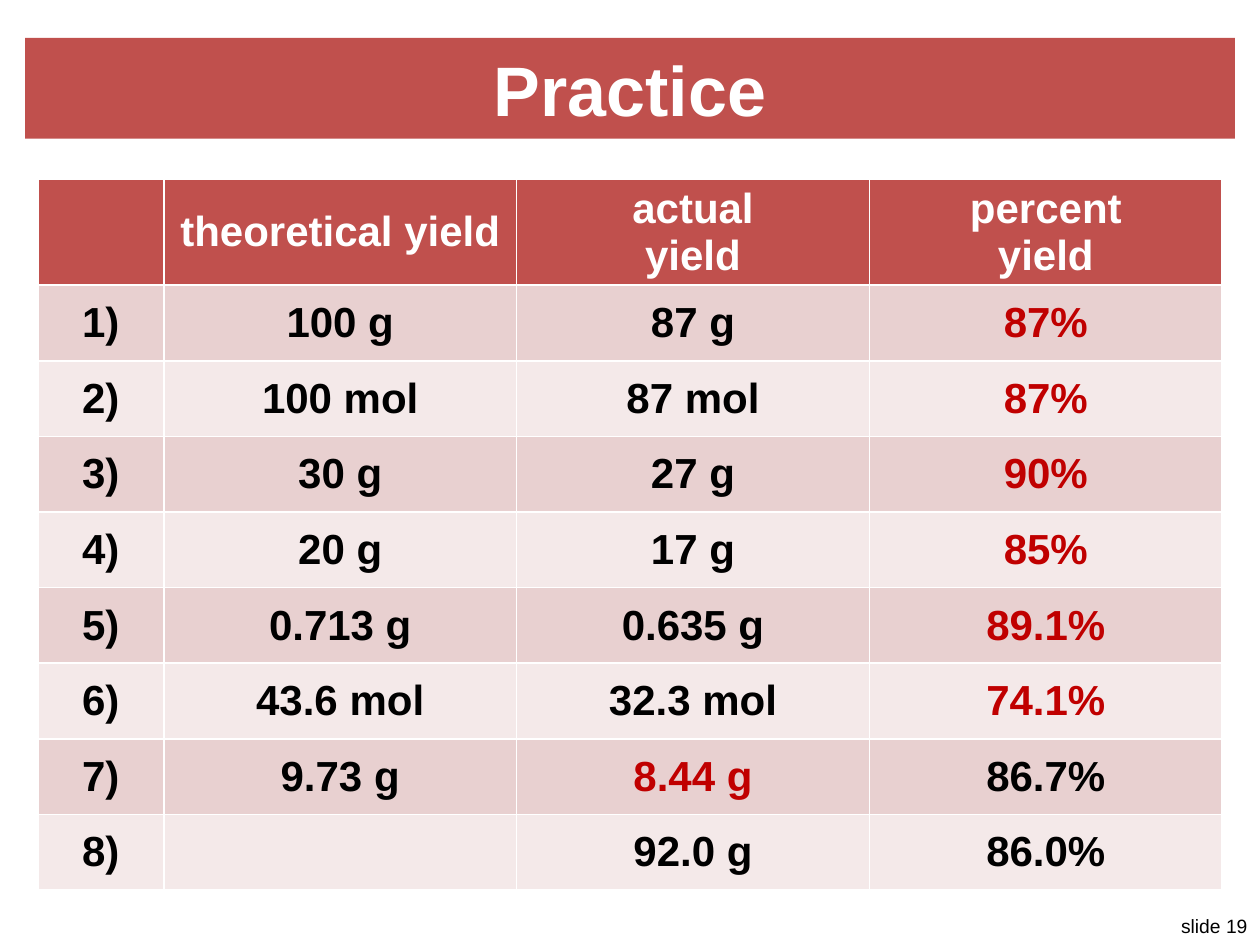
from pptx import Presentation
from pptx.dml.color import RGBColor
from pptx.enum.text import MSO_ANCHOR as Anchor, MSO_AUTO_SIZE as AutoSize, PP_ALIGN as Align
from pptx.util import Inches, Pt

RED = RGBColor(0xC0, 0x50, 0x4D)
ANSWER_RED = RGBColor(0xC0, 0x00, 0x00)
BAND_DARK = RGBColor(0xE8, 0xD0, 0xD0)
BAND_LIGHT = RGBColor(0xF4, 0xE9, 0xE9)
WHITE = RGBColor(0xFF, 0xFF, 0xFF)
BLACK = RGBColor(0x00, 0x00, 0x00)


def write(frame, text, size, color, align=Align.CENTER, bold=True):
    frame.text = text
    for paragraph in frame.paragraphs:
        paragraph.alignment = align
        for run in paragraph.runs:
            run.font.name = "Arial"
            run.font.size = Pt(size)
            run.font.bold = bold
            run.font.color.rgb = color


prs = Presentation()
prs.slide_width, prs.slide_height = Inches(10), Inches(7.5)
slide = prs.slides.add_slide(prs.slide_layouts[5])

# Title bar
title = slide.shapes.title
title.left, title.top = Inches(0.2), Inches(0.3)
title.width, title.height = Inches(9.6), Inches(0.8)
title.fill.solid()
title.fill.fore_color.rgb = RED
title.text_frame.vertical_anchor = Anchor.MIDDLE
write(title.text_frame, "Practice", 40, WHITE)

# Yield table: the default style supplies the white cell borders
yields = [
    ("", "theoretical yield", "actual\nyield", "percent\nyield"),
    ("1)", "100 g", "87 g", "87%"),
    ("2)", "100 mol", "87 mol", "87%"),
    ("3)", "30 g", "27 g", "90%"),
    ("4)", "20 g", "17 g", "85%"),
    ("5)", "0.713 g", "0.635 g", "89.1%"),
    ("6)", "43.6 mol", "32.3 mol", "74.1%"),
    ("7)", "9.73 g", "8.44 g", "86.7%"),
    ("8)", "", "92.0 g", "86.0%"),
]
# Answers: percent yield in problems 1 to 6, actual yield in problem 7
answers = {(problem, 3) for problem in range(1, 7)} | {(7, 2)}

table = slide.shapes.add_table(len(yields), 4, Inches(0.3), Inches(1.42),
                               Inches(9.4), Inches(5.7)).table
for column, width in zip(table.columns, (1, 2.8, 2.8, 2.8)):
    column.width = Inches(width)

for r, values in enumerate(yields):
    # The two-line headings stretch the header row
    table.rows[r].height = Inches(0.6 if r else 0.41)
    band = RED if r == 0 else BAND_DARK if r % 2 else BAND_LIGHT
    for c, value in enumerate(values):
        cell = table.cell(r, c)
        cell.fill.solid()
        cell.fill.fore_color.rgb = band
        cell.vertical_anchor = Anchor.MIDDLE
        color = WHITE if r == 0 else ANSWER_RED if (r, c) in answers else BLACK
        if value:
            write(cell.text_frame, value, 24, color)

# Slide number
slide_number = slide.shapes.add_textbox(Inches(9.25), Inches(7.21), Inches(0.75), Inches(0.29))
slide_number.text_frame.word_wrap = False
slide_number.text_frame.auto_size = AutoSize.SHAPE_TO_FIT_TEXT
write(slide_number.text_frame, "slide 19", 11, BLACK, Align.RIGHT, bold=False)

prs.save("out.pptx")
